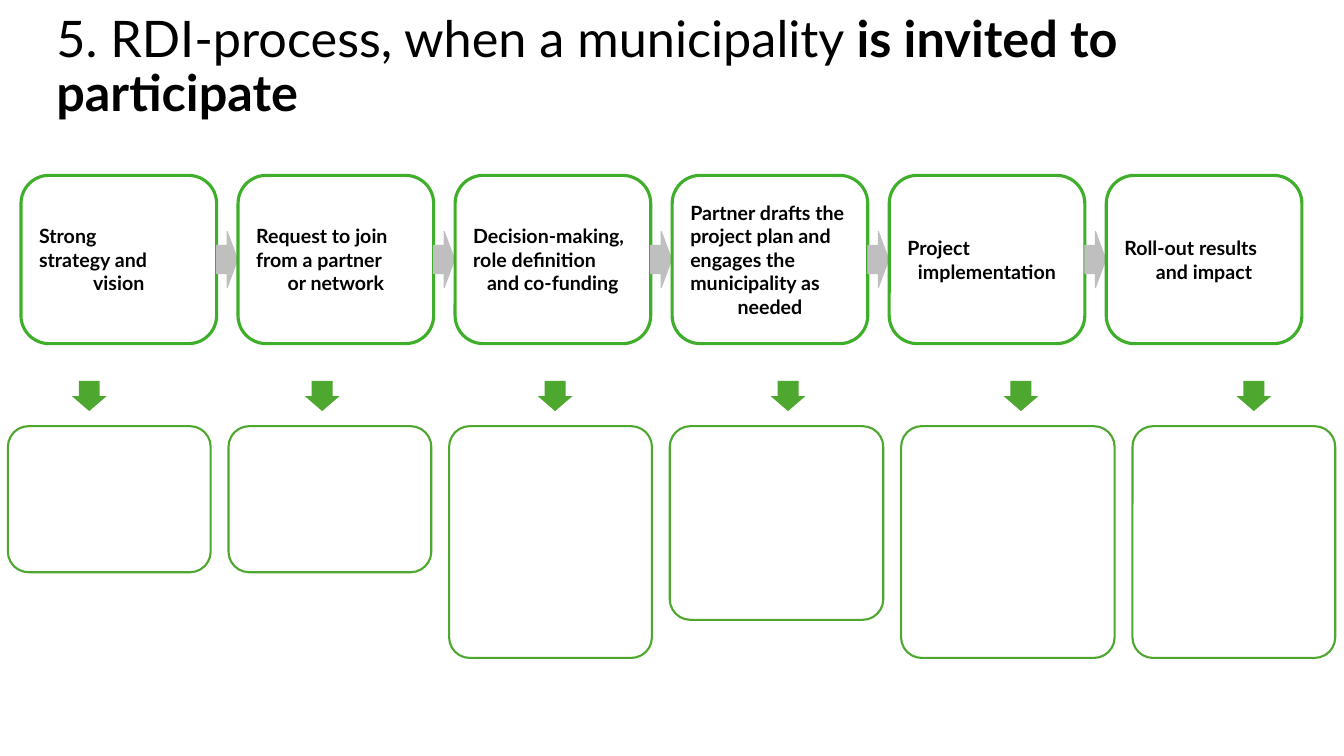
import pptx
import pptx.util
from pptx.dml.color import RGBColor
from pptx.enum.shapes import MSO_SHAPE
from pptx.enum.text import MSO_ANCHOR, PP_ALIGN
from pptx.util import Cm, Pt

TITLE = [("5. RDI-process, when a municipality ", False),
         ("is invited to participate", True)]
STEPS = [
    "Strong\nstrategy and\nvision",
    "Request to join\nfrom a partner\nor network",
    "Decision-making,\nrole definition\nand co-funding",
    "Partner drafts the\nproject plan and\nengages the\nmunicipality as\nneeded",
    "Project\nimplementation",
    "Roll-out results\nand impact",
]
# Width and height of each empty detail card, in cm
CARDS = [(5.11, 3.68), (5.11, 3.68), (5.11, 5.84),
         (5.38, 4.88), (5.38, 5.84), (5.11, 5.84)]

FONT = "Lato"
BLACK = RGBColor(0x00, 0x00, 0x00)
WHITE = RGBColor(0xFF, 0xFF, 0xFF)
GREY = RGBColor(0xBF, 0xBF, 0xBF)
STEP_GREEN = RGBColor(0x3F, 0xAE, 0x2A)
CARD_GREEN = RGBColor(0x4E, 0xA7, 0x2E)

STEP_LEFT, STEP_TOP, STEP_WIDTH, STEP_HEIGHT = 0.53, 4.42, 4.93, 4.24
STEP_PITCH = 5.47
LINK_WIDTH, LINK_HEIGHT = 0.53, 1.42
DOWN_CENTER, DOWN_TOP, DOWN_WIDTH, DOWN_HEIGHT = 2.25, 9.6, 0.88, 0.76
DOWN_PITCH = 5.87
CARD_LEFT, CARD_TOP, CARD_GAP = 0.2, 10.74, 0.45
CARD_RADIUS = 0.52

presentation = pptx.Presentation()
presentation.slide_width = Cm(33.87)
presentation.slide_height = Cm(19.05)
slide = presentation.slides.add_slide(presentation.slide_layouts[6])


def add_block(preset, left, top, width, height, fill, line=None, line_width=0):
    shape = slide.shapes.add_shape(preset, Cm(left), Cm(top), Cm(width), Cm(height))
    shape.shadow.inherit = False
    shape.fill.solid()
    shape.fill.fore_color.rgb = fill
    if line is None:
        shape.line.fill.background()
    else:
        shape.line.color.rgb = line
        shape.line.width = Pt(line_width)
    return shape


def add_run(paragraph, text, size, bold):
    run = paragraph.add_run()
    run.text = text
    run.font.name = FONT
    run.font.size = Pt(size)
    run.font.bold = bold
    run.font.color.rgb = BLACK


title = slide.shapes.add_textbox(Cm(1.17), Cm(0), Cm(32.44), Cm(3.43))
title.text_frame.word_wrap = True
title.text_frame.vertical_anchor = MSO_ANCHOR.MIDDLE
title_paragraph = title.text_frame.paragraphs[0]
title_paragraph.line_spacing = 0.9
for text, bold in TITLE:
    add_run(title_paragraph, text, 36, bold)

card_left = CARD_LEFT
for index, (width, height) in enumerate(CARDS):
    down_left = DOWN_CENTER + index * DOWN_PITCH - DOWN_WIDTH / 2
    arrow = add_block(MSO_SHAPE.DOWN_ARROW, down_left, DOWN_TOP,
                      DOWN_WIDTH, DOWN_HEIGHT, CARD_GREEN)
    arrow.adjustments[0] = 0.6
    arrow.adjustments[1] = 0.5
    card = add_block(MSO_SHAPE.ROUNDED_RECTANGLE, card_left, CARD_TOP,
                     width, height, WHITE, CARD_GREEN, 1.5)
    card.adjustments[0] = CARD_RADIUS / min(width, height)
    card_left += width + CARD_GAP

for index, text in enumerate(STEPS):
    left = STEP_LEFT + index * STEP_PITCH
    step = add_block(MSO_SHAPE.ROUNDED_RECTANGLE, left, STEP_TOP,
                     STEP_WIDTH, STEP_HEIGHT, WHITE, STEP_GREEN, 2.25)
    step.text_frame.word_wrap = True
    step.text_frame.vertical_anchor = MSO_ANCHOR.MIDDLE
    paragraph = step.text_frame.paragraphs[0]
    paragraph.alignment = PP_ALIGN.CENTER
    add_run(paragraph, text, 14, True)
    if index < len(STEPS) - 1:
        add_block(MSO_SHAPE.RIGHT_ARROW, left + STEP_WIDTH,
                  STEP_TOP + (STEP_HEIGHT - LINK_HEIGHT) / 2,
                  LINK_WIDTH, LINK_HEIGHT, GREY, GREY)

presentation.save("out.pptx")
